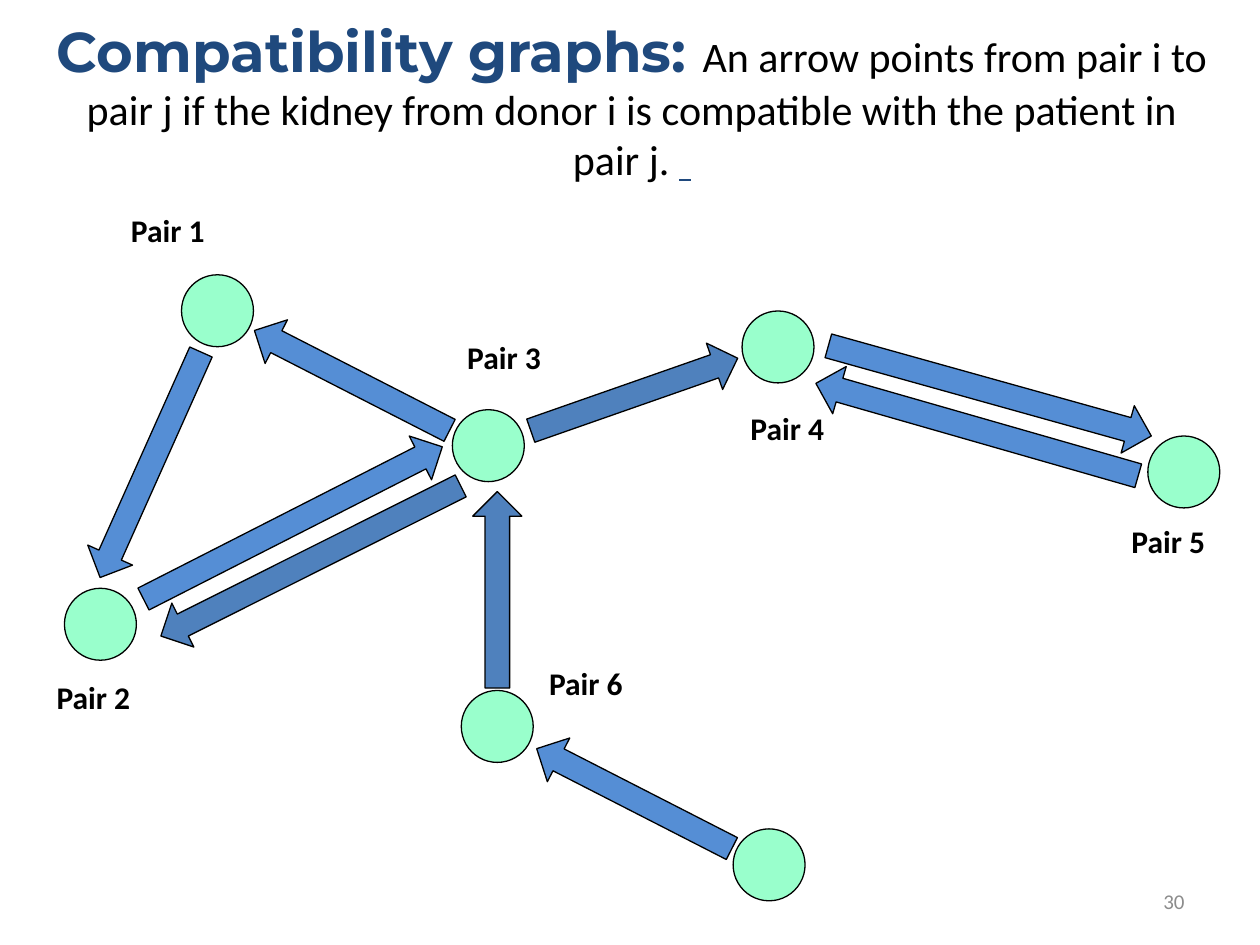
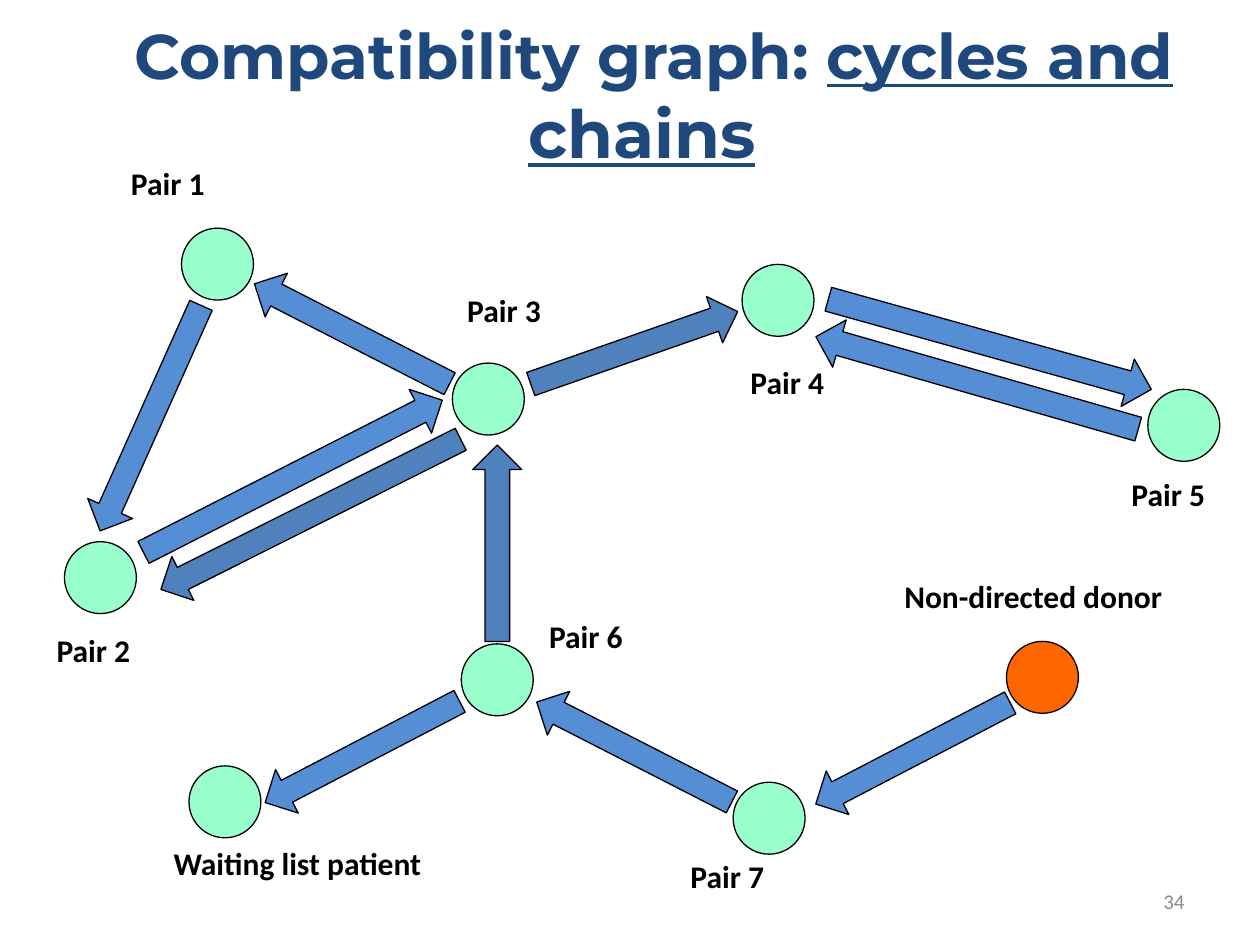
"""Build two slides that show kidney exchange compatibility graphs."""
from dataclasses import dataclass

from pptx import Presentation
from pptx.dml.color import RGBColor
from pptx.enum.shapes import MSO_SHAPE as Preset
from pptx.enum.text import MSO_ANCHOR as Anchor, PP_ALIGN as Align
from pptx.util import Cm, Pt

NAVY = RGBColor(0x1F, 0x49, 0x7D)
BLACK = RGBColor(0x00, 0x00, 0x00)
GREY = RGBColor(0x8C, 0x8C, 0x8C)
MINT = RGBColor(0x99, 0xFF, 0xCC)
ORANGE = RGBColor(0xFF, 0x66, 0x00)
BLUE = RGBColor(0x55, 0x8E, 0xD5)
STEEL = RGBColor(0x4F, 0x81, 0xBD)

HEAD_FONT = "Montserrat"
BODY_FONT = "Calibri"
NODE_SIZE = 1.45
ARROW_WIDTH = 0.99
LABEL_HEIGHT = 1.02
GRAPH_DROP = 0.94


@dataclass(frozen=True)
class Span:
    """A run of text with its look."""
    text: str
    size: int = 18
    font: str = BODY_FONT
    color: RGBColor = BLACK
    bold: bool = True
    underline: bool = False


@dataclass(frozen=True)
class Frame:
    """A rectangle in centimetres."""
    left: float
    top: float
    width: float
    height: float

    def lowered(self, drop: float) -> "Frame":
        """Return the same rectangle moved down."""
        return Frame(self.left, self.top + drop, self.width, self.height)

    def lengths(self) -> tuple:
        """Return left, top, width and height as slide lengths."""
        return Cm(self.left), Cm(self.top), Cm(self.width), Cm(self.height)


@dataclass(frozen=True)
class Node:
    """A circle for one pair or person."""
    left: float
    top: float
    color: RGBColor = MINT


@dataclass(frozen=True)
class Label:
    """A name beside a node."""
    text: str
    left: float
    top: float
    width: float = 2.0


@dataclass(frozen=True)
class Arrow:
    """A block arrow, placed as if upright and then turned."""
    left: float
    top: float
    length: float
    angle: float
    color: RGBColor = BLUE


@dataclass(frozen=True)
class Graph:
    """Nodes, arrows and labels drawn together."""
    nodes: tuple
    arrows: tuple
    labels: tuple


@dataclass(frozen=True)
class Page:
    """The content of one slide."""
    title: tuple
    title_frame: Frame
    graphs: tuple
    drop: float
    number: str


PAIRS = Graph(
    nodes=(
        Node(3.66, 4.6), Node(1.3, 10.92), Node(9.12, 7.32), Node(14.96, 5.33),
        Node(23.14, 7.85), Node(9.3, 12.98), Node(14.78, 15.77),
    ),
    arrows=(
        Arrow(6.6, 4.52, 4.42, 117.1),
        Arrow(2.54, 5.94, 4.98, 24.1),
        Arrow(12.29, 4.8, 4.42, 250.7, STEEL),
        Arrow(19.2, 4.34, 6.76, 106),
        Arrow(19.46, 3.56, 6.76, 285.6),
        Arrow(5.77, 6.99, 6.76, 63.4, STEEL),
        Arrow(5.41, 6.22, 6.76, 243),
        Arrow(9.53, 8.97, 3.96, 180, STEEL),
        Arrow(12.29, 12.95, 4.42, 117.1),
    ),
    labels=(
        Label("Pair 1", 2.39, 3.18), Label("Pair 2", 0.89, 12.6),
        Label("Pair 3", 9.17, 5.74), Label("Pair 4", 14.88, 7.19),
        Label("Pair 5", 22.56, 9.45), Label("Pair 6", 10.82, 12.32),
    ),
)
CHAIN = Graph(
    nodes=(Node(20.29, 12.93, ORANGE), Node(3.81, 15.44)),
    arrows=(Arrow(17.91, 12.98, 4.42, 62.5), Arrow(6.81, 12.95, 4.42, 62.5)),
    labels=(
        Label("Pair 7", 13.67, 17.15),
        Label("Non-directed donor", 17.98, 11.51, 5.74),
        Label("Waiting list patient", 3.25, 16.89, 5.56),
    ),
)

PAGES = (
    Page(
        title=(
            Span("Compatibility graphs: ", 32, HEAD_FONT, NAVY),
            Span("An arrow points from pair i to pair j if the kidney from donor i "
                 "is compatible with the patient in pair j. ", 24, bold=False),
            Span(" ", 24, HEAD_FONT, NAVY, underline=True),
        ),
        title_frame=Frame(0.89, 0.2, 23.7, 2.74),
        graphs=(PAIRS,),
        drop=GRAPH_DROP,
        number="30",
    ),
    Page(
        title=(
            Span("Compatibility graph: ", 36, HEAD_FONT, NAVY),
            Span("cycles and ", 36, HEAD_FONT, NAVY, underline=True),
            Span("chains", 38, HEAD_FONT, NAVY, underline=True),
            Span("\t", 18, HEAD_FONT, NAVY, bold=False),
        ),
        title_frame=Frame(2.39, 0.2, 21.59, 1.96),
        graphs=(PAIRS, CHAIN),
        drop=0,
        number="34",
    ),
)


def add_text(slide, frame: Frame, spans: tuple, align: Align = Align.LEFT,
             anchor: Anchor = Anchor.TOP, wrap: bool = True) -> None:
    """Add a text box with one paragraph built from spans."""
    box = slide.shapes.add_textbox(*frame.lengths())
    box.text_frame.word_wrap = wrap
    box.text_frame.vertical_anchor = anchor
    para = box.text_frame.paragraphs[0]
    para.alignment = align
    for span in spans:
        run = para.add_run()
        run.text = span.text
        run.font.size = Pt(span.size)
        run.font.name = span.font
        run.font.color.rgb = span.color
        run.font.bold = span.bold
        run.font.underline = span.underline


def add_outlined(slide, preset: Preset, frame: Frame, color: RGBColor,
                 angle: float = 0) -> None:
    """Add a filled preset shape with a thin black outline."""
    shape = slide.shapes.add_shape(preset, *frame.lengths())
    shape.shadow.inherit = False
    shape.fill.solid()
    shape.fill.fore_color.rgb = color
    shape.line.color.rgb = BLACK
    shape.line.width = Pt(0.75)
    shape.rotation = angle


def draw_graph(slide, graph: Graph, drop: float) -> None:
    """Draw a graph, moved down by the given distance."""
    for node in graph.nodes:
        frame = Frame(node.left, node.top, NODE_SIZE, NODE_SIZE)
        add_outlined(slide, Preset.OVAL, frame.lowered(drop), node.color)
    for arrow in graph.arrows:
        frame = Frame(arrow.left, arrow.top, ARROW_WIDTH, arrow.length)
        add_outlined(slide, Preset.DOWN_ARROW, frame.lowered(drop), arrow.color, arrow.angle)
    for label in graph.labels:
        frame = Frame(label.left, label.top, label.width, LABEL_HEIGHT)
        add_text(slide, frame.lowered(drop), (Span(label.text),), wrap=False)


def draw_page(deck, page: Page) -> None:
    """Add one slide with its title, graphs and number."""
    slide = deck.slides.add_slide(deck.slide_layouts[6])
    add_text(slide, page.title_frame, page.title, Align.CENTER)
    for graph in page.graphs:
        draw_graph(slide, graph, page.drop)
    number = Span(page.number, 12, color=GREY, bold=False)
    add_text(slide, Frame(18.21, 17.65, 5.92, 1.02), (number,), Align.RIGHT, Anchor.MIDDLE)


def main() -> None:
    """Build and save the deck."""
    deck = Presentation()
    deck.slide_width, deck.slide_height = Cm(25.4), Cm(19.05)
    for page in PAGES:
        draw_page(deck, page)
    deck.save("out.pptx")


if __name__ == "__main__":
    main()
